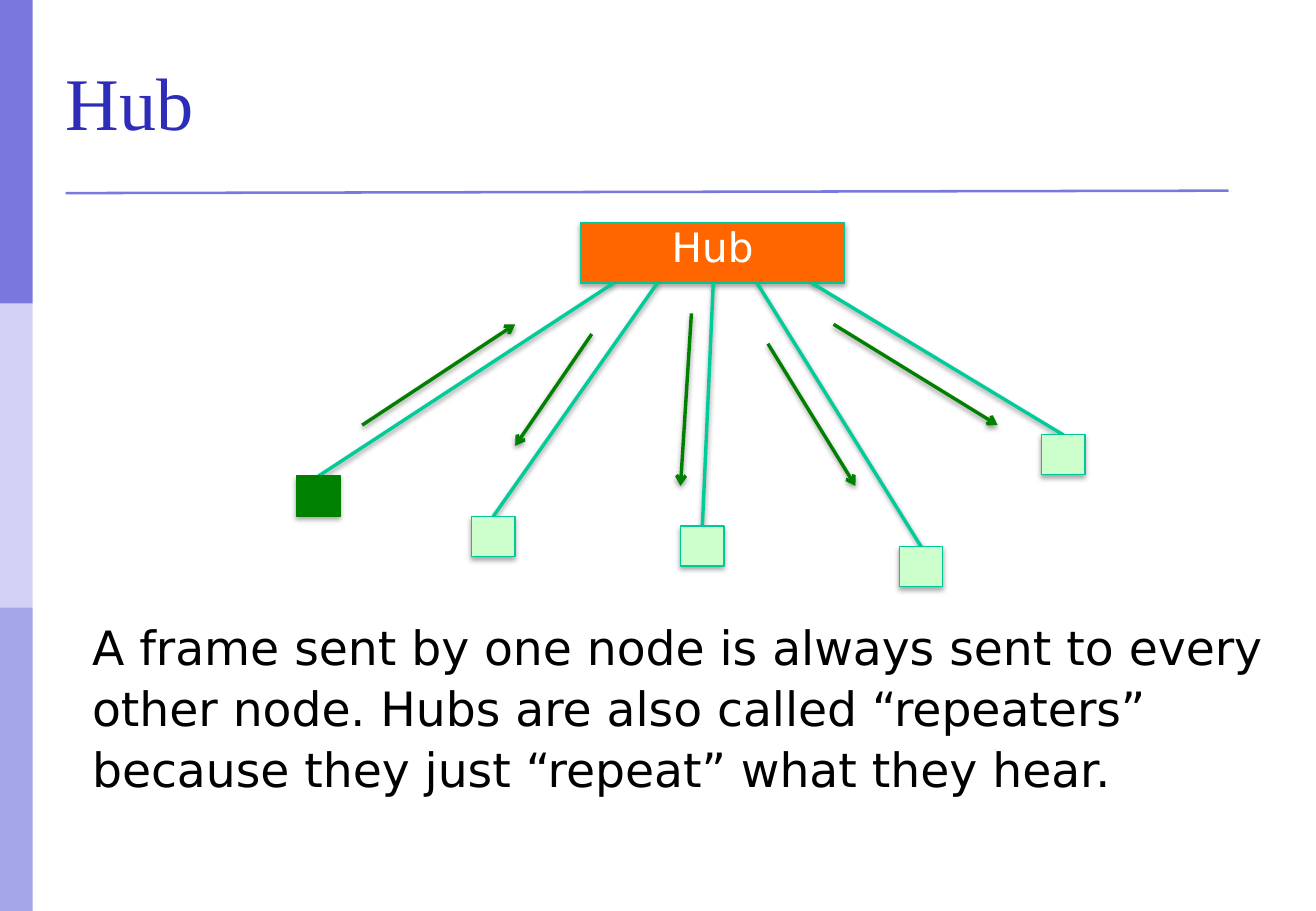
from dataclasses import dataclass

import pptx
import pptx.dml.color
import pptx.enum.shapes
import pptx.enum.text
import pptx.oxml
import pptx.oxml.ns
import pptx.util
from pptx.util import Inches

COLORS = {
    "bar_dark": "7878DE", "bar_light": "D2D2F4", "bar_mid": "A5A5E9",
    "title": "2D2DB9", "hub": "FF6600", "edge": "00C896", "link": "00CC99",
    "sender": "008000", "receiver": "CCFFCC", "white": "FFFFFF", "black": "000000",
}
BODY_FONT = "DejaVu Sans"
BAR_WIDTH, BAR_HEIGHT = 0.27, 2.5
HUB_LEFT, HUB_TOP, HUB_WIDTH, HUB_HEIGHT = 4.78, 1.83, 2.17, 0.5
NODE_WIDTH, NODE_HEIGHT = 0.36, 0.33


@dataclass
class Node:
    """A computer, the hub port it is linked to and the arrow of its frame."""
    center: float
    top: float
    port: float
    arrow_start: tuple[float, float]
    arrow_end: tuple[float, float]
    fill: str = "receiver"
    edge: str = "edge"


NODES = [
    Node(2.62, 3.92, 5.05, (2.98, 3.5), (4.24, 2.67), "sender", "sender"),
    Node(4.06, 4.25, 5.41, (4.87, 2.75), (4.24, 3.67)),
    Node(5.78, 4.33, 5.87, (5.69, 2.58), (5.6, 4)),
    Node(7.58, 4.5, 6.23, (6.32, 2.83), (7.04, 4)),
    Node(8.75, 3.58, 6.68, (6.86, 2.67), (8.21, 3.5)),
]


def rgb(name: str) -> pptx.dml.color.RGBColor:
    return pptx.dml.color.RGBColor.from_string(COLORS[name])


def set_effects(item, opacity: int = 0, distance: float = 0) -> None:
    """Replace the theme effects with a downward shadow, or with none."""
    properties = item._element.spPr
    for old in properties.findall(pptx.oxml.ns.qn("a:effectLst")):
        properties.remove(old)
    shadow = ""
    if opacity:
        shadow = (
            f'<a:outerShdw blurRad="{pptx.util.Pt(3.1)}" dist="{pptx.util.Pt(distance)}" '
            f'dir="5400000" rotWithShape="0"><a:srgbClr val="{COLORS["black"]}">'
            f'<a:alpha val="{opacity * 1000}"/></a:srgbClr></a:outerShdw>'
        )
    namespace = pptx.oxml.ns.nsdecls("a")
    properties.append(pptx.oxml.parse_xml(f"<a:effectLst {namespace}>{shadow}</a:effectLst>"))


def add_box(page, left: float, top: float, width: float, height: float,
            fill: str, edge: str | None = None):
    box = page.shapes.add_shape(
        pptx.enum.shapes.MSO_SHAPE.RECTANGLE,
        Inches(left), Inches(top), Inches(width), Inches(height))
    box.shadow.inherit = False
    box.fill.solid()
    box.fill.fore_color.rgb = rgb(fill)
    if edge is None:
        box.line.fill.background()
    else:
        box.line.color.rgb = rgb(edge)
        box.line.width = pptx.util.Pt(0.75)
        set_effects(box, opacity=35, distance=1.8)
    return box


def add_line(page, start: tuple[float, float], end: tuple[float, float], color: str,
             width: float = 2, arrow: bool = False, shadow: bool = True) -> None:
    line = page.shapes.add_connector(
        pptx.enum.shapes.MSO_CONNECTOR.STRAIGHT,
        Inches(start[0]), Inches(start[1]), Inches(end[0]), Inches(end[1]))
    line.line.color.rgb = rgb(color)
    line.line.width = pptx.util.Pt(width)
    if arrow:
        outline = line._element.spPr.find(pptx.oxml.ns.qn("a:ln"))
        namespace = pptx.oxml.ns.nsdecls("a")
        outline.append(pptx.oxml.parse_xml(f'<a:tailEnd {namespace} type="arrow"/>'))
    set_effects(line, opacity=38 if shadow else 0, distance=1.6)


def write_text(box, text: str, *, size: float, color: str, spacing: float,
               font: str = BODY_FONT, align=pptx.enum.text.PP_ALIGN.LEFT,
               anchor=pptx.enum.text.MSO_ANCHOR.MIDDLE) -> None:
    frame = box.text_frame
    frame.word_wrap = True
    frame.vertical_anchor = anchor
    para = frame.paragraphs[0]
    para.alignment = align
    para.line_spacing = spacing
    span = para.add_run()
    span.text = text
    span.font.size = pptx.util.Pt(size)
    span.font.name = font
    span.font.color.rgb = rgb(color)


def add_title(page) -> None:
    title = page.shapes.title
    title.left, title.top = Inches(0.54), Inches(0.27)
    title.width, title.height = Inches(9.74), Inches(1.27)
    frame = title.text_frame
    frame.margin_left = frame.margin_right = frame.margin_top = frame.margin_bottom = 0
    frame.auto_size = pptx.enum.text.MSO_AUTO_SIZE.NONE
    write_text(title, "Hub", size=44, color="title", spacing=0.78, font="Times New Roman")


def add_network(page) -> None:
    hub = add_box(page, HUB_LEFT, HUB_TOP, HUB_WIDTH, HUB_HEIGHT, "hub", "edge")
    write_text(hub, "Hub", size=24, color="white", spacing=0.68,
               align=pptx.enum.text.PP_ALIGN.CENTER)
    for node in NODES:
        add_line(page, (node.center, node.top), (node.port, HUB_TOP + HUB_HEIGHT), "link")
        add_box(page, node.center - NODE_WIDTH / 2, node.top, NODE_WIDTH, NODE_HEIGHT,
                node.fill, node.edge)
        add_line(page, node.arrow_start, node.arrow_end, "sender", arrow=True)


def main() -> None:
    deck = pptx.Presentation()
    deck.slide_width, deck.slide_height = Inches(10.83), Inches(7.5)
    page = deck.slides.add_slide(deck.slide_layouts[5])

    for row, fill in enumerate(("bar_dark", "bar_light", "bar_mid")):
        add_box(page, 0, row * BAR_HEIGHT, BAR_WIDTH, BAR_HEIGHT, fill)
    add_line(page, (0.54, 1.59), (10.11, 1.57), "bar_dark", width=1.5, shadow=False)
    add_title(page)
    add_network(page)

    note = page.shapes.add_textbox(Inches(0.66), Inches(5), Inches(9.83), Inches(2.13))
    write_text(
        note,
        "A frame sent by one node is always sent to every other node. Hubs are also "
        "called “repeaters” because they just “repeat” what they hear.",
        size=28, color="black", spacing=1.08, anchor=pptx.enum.text.MSO_ANCHOR.TOP)

    deck.save("out.pptx")


if __name__ == "__main__":
    main()
